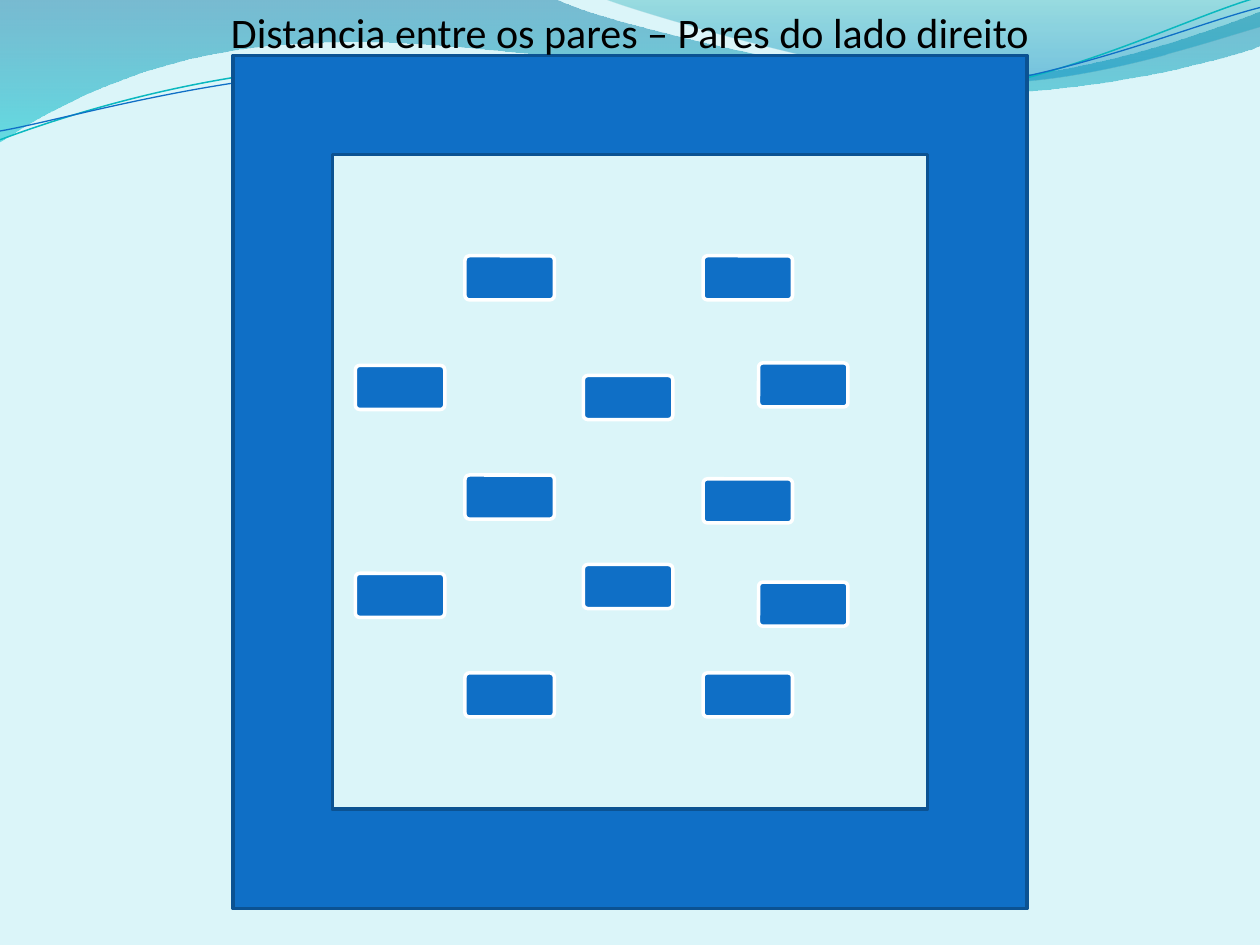
import pptx
import pptx.util
import pptx.dml.color
import pptx.enum.shapes
import pptx.enum.text
import pptx.oxml.ns
from lxml import etree

Inches = pptx.util.Inches
Pt = pptx.util.Pt
qn = pptx.oxml.ns.qn
SHAPE = pptx.enum.shapes.MSO_SHAPE

COLORS = {
    "background": "DBF5F9", "blue": "0F6FC6", "dark_blue": "0B5292",
    "white": "FFFFFF", "black": "000000", "teal": "0AB8BF",
    "wave_blue": "0074A1", "wave_cyan": "00C6CF",
    "crest_teal": "00A1A9", "crest_blue": "008BBF",
}

# Outlines: a start point, then (x, y) lines or six-number Bezier curves.
LEFT_WAVE = [
    (0, 0), (4.4, -0.01), (4.76, 0.17, 6.64, 0.63, 7.58, 0.63),
    (8.53, 0.63, 9.58, 0.26, 10, 0.09), (10.01, 0.36),
    (9.83, 0.44, 8.7, 0.76, 7.46, 0.75), (6.22, 0.75, 3.82, 0.28, 2.57, 0.34),
    (1.29, 0.36, 0.46, 0.83, -0.01, 1.13), (0, 0),
]
RIGHT_WAVE = [
    (4.79, -0.01), (5.09, 0.11, 6.82, 0.62, 7.69, 0.65),
    (8.56, 0.69, 9.61, 0.32, 10, 0.21), (10, 0), (4.79, -0.01),
]
TEAL_LINE = [
    (0, 1.11), (0.48, 0.93, 1.58, 0.57, 2.77, 0.52),
    (3.95, 0.47, 5.93, 0.89, 7.13, 0.8), (8.33, 0.71, 9.38, 0.15, 9.98, -0.02),
]
BLUE_LINE = [
    (0, 1.04), (0.47, 0.96, 1.64, 0.61, 2.83, 0.56),
    (4.03, 0.51, 5.97, 0.84, 7.17, 0.75), (8.36, 0.67, 9.41, 0.21, 10, 0.06),
]

# Top left corners of the pairs.
PAIRS = [
    (3.69, 2.03), (5.58, 2.03), (2.82, 2.9), (4.63, 2.98), (4.63, 4.48),
    (6.02, 2.88), (5.58, 3.8), (6.02, 4.62), (5.58, 5.34), (2.82, 4.55),
    (3.69, 3.77), (3.69, 5.34),
]


def rgb(name):
    return pptx.dml.color.RGBColor.from_string(COLORS[name])


def bend(sp, outline):
    """Turn each three line segments that hold a curve's points into that curve."""
    lines = iter(list(sp.element.spPr.iter(qn("a:lnTo"))))
    for seg in outline[1:]:
        parts = [next(lines) for _ in range(len(seg) // 2)]
        if len(parts) == 3:
            curve = etree.Element(qn("a:cubicBezTo"))
            parts[0].addprevious(curve)
            for part in parts:
                curve.append(part[0])
                part.getparent().remove(part)


def write_text(tf, text, font="Calibri", size=24, color="black",
               align=pptx.enum.text.PP_ALIGN.CENTER):
    tf.word_wrap = True
    p = tf.paragraphs[0]
    p.alignment = align
    r = p.add_run()
    r.text = text
    r.font.name = font
    r.font.size = Pt(size)
    r.font.color.rgb = rgb(color)


class SlideBuilder:
    def __init__(self, s):
        self.s = s
        s.background.fill.solid()
        s.background.fill.fore_color.rgb = rgb("background")

    def outline(self, outline, close):
        points = [(Inches(seg[i]), Inches(seg[i + 1]))
                  for seg in outline for i in range(0, len(seg), 2)]
        builder = self.s.shapes.build_freeform(*points[0])
        builder.add_line_segments(points[1:], close=close)
        sp = builder.convert_to_shape()
        bend(sp, outline)
        sp.shadow.inherit = False
        return sp

    def wave(self, outline, stops):
        """Draw a vertical gradient area; stops are (position, colour, opacity %)."""
        sp = self.outline(outline, True)
        sp.line.fill.background()
        sp.fill.gradient()
        sp.fill.gradient_angle = 270
        for stop, (position, color, _) in zip(sp.fill.gradient_stops, stops):
            stop.position = position
            stop.color.rgb = rgb(color)
        for clr, (_, _, opacity) in zip(sp.element.spPr.iter(qn("a:srgbClr")), stops):
            etree.SubElement(clr, qn("a:alpha")).set("val", str(opacity * 1000))

    def curve(self, outline, color, width):
        sp = self.outline(outline, False)
        sp.fill.background()
        sp.line.color.rgb = rgb(color)
        sp.line.width = Pt(width)

    def shape(self, kind, x, y, w, h, line, adj):
        sp = self.s.shapes.add_shape(kind, Inches(x), Inches(y), Inches(w), Inches(h))
        sp.shadow.inherit = False
        sp.fill.solid()
        sp.fill.fore_color.rgb = rgb("blue")
        sp.line.color.rgb = rgb(line)
        sp.line.width = Pt(2)
        sp.adjustments[0] = adj

    def title(self, text, x, y, w, h):
        sp = self.s.shapes.title
        sp.left, sp.top, sp.width, sp.height = map(Inches, (x, y, w, h))
        sp.text_frame.vertical_anchor = pptx.enum.text.MSO_ANCHOR.TOP
        write_text(sp.text_frame, text)
        self.s.shapes.element.append(sp.element)  # bring to front


def main():
    prs = pptx.Presentation()
    prs.slide_width, prs.slide_height = Inches(10), Inches(7.5)
    slide = SlideBuilder(prs.slides.add_slide(prs.slide_layouts[5]))

    slide.wave(LEFT_WAVE, [(0, "wave_blue", 45), (1, "wave_cyan", 55)])
    slide.wave(RIGHT_WAVE, [(0, "crest_teal", 30), (0.8, "crest_blue", 45)])
    slide.curve(TEAL_LINE, "teal", 0.85)
    slide.curve(BLUE_LINE, "blue", 0.75)

    slide.shape(SHAPE.FRAME, 1.85, 0.44, 6.3, 6.77, "dark_blue", adj=0.125)
    for x, y in PAIRS:
        slide.shape(SHAPE.ROUNDED_RECTANGLE, x, y, 0.71, 0.35, "white", adj=0.1)

    slide.title("Distancia entre os pares – Pares do lado direito", 0, 0, 10, 0.52)
    prs.save("out.pptx")


if __name__ == "__main__":
    main()
